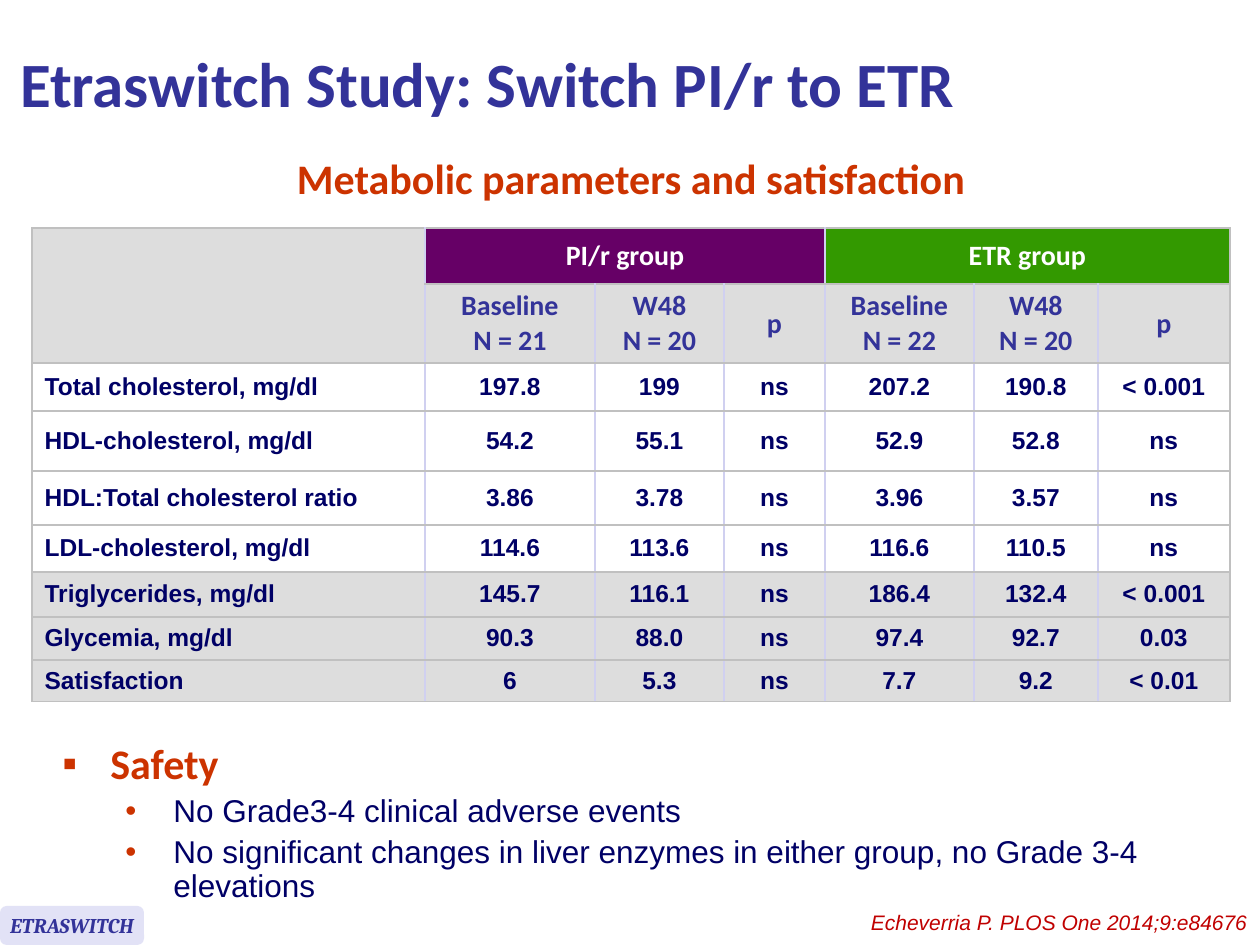
from dataclasses import dataclass

from lxml import etree
from pptx import Presentation
from pptx import util as u
from pptx.dml.color import RGBColor
from pptx.enum import shapes, text
from pptx.oxml import ns

PX = 914400 / 126
NAVY, INDIGO, RUST = "000066", "333399", "CC3300"
WHITE, GREY, EDGE, LAVENDER = "FFFFFF", "DDDDDD", "C0C0C0", "D0D0F0"
LEFT, CENTER, RIGHT = text.PP_ALIGN.LEFT, text.PP_ALIGN.CENTER, text.PP_ALIGN.RIGHT


@dataclass(frozen=True)
class Style:
    size: int
    face: str
    color: str
    bold: bool = False
    italic: bool = False
    align: text.PP_ALIGN = LEFT


@dataclass(frozen=True)
class Box:
    left: int
    top: int
    width: int
    height: int


@dataclass(frozen=True)
class Bullet:
    words: str
    mark: str
    level: int
    indent: int
    style: Style


TITLE = Style(36, "Calibri", INDIGO, bold=True)
SUBTITLE = Style(24, "Calibri", RUST, bold=True, align=CENTER)
GROUP = Style(16, "Calibri", WHITE, bold=True, align=CENTER)
COLUMN = Style(16, "Calibri", INDIGO, bold=True, align=CENTER)
LABEL = Style(14, "Arial", NAVY, bold=True)
VALUE = Style(14, "Arial", NAVY, bold=True, align=CENTER)
BADGE = Style(12, "Cambria", INDIGO, bold=True, italic=True, align=CENTER)
CITATION = Style(12, "Arial", "C00000", italic=True, align=RIGHT)
HEADING = Style(24, "Calibri", RUST, bold=True)
POINT = Style(18, "Arial", NAVY)

COLUMN_WIDTHS = [393, 170, 129, 101, 149, 124, 132]
ROW_HEIGHTS = [56, 79, 48, 60, 54, 47, 45, 43, 42]
GROUPS = [("PI/r group", "660066", 1), ("ETR group", "339900", 4)]
HEADERS = ["Baseline\nN = 21", "W48\nN = 20", "p", "Baseline\nN = 22", "W48\nN = 20", "p"]
RESULTS = [
    ("Total cholesterol, mg/dl", "197.8", "199", "ns", "207.2", "190.8", "< 0.001"),
    ("HDL-cholesterol, mg/dl", "54.2", "55.1", "ns", "52.9", "52.8", "ns"),
    ("HDL:Total cholesterol ratio", "3.86", "3.78", "ns", "3.96", "3.57", "ns"),
    ("LDL-cholesterol, mg/dl", "114.6", "113.6", "ns", "116.6", "110.5", "ns"),
    ("Triglycerides, mg/dl", "145.7", "116.1", "ns", "186.4", "132.4", "< 0.001"),
    ("Glycemia, mg/dl", "90.3", "88.0", "ns", "97.4", "92.7", "0.03"),
    ("Satisfaction", "6", "5.3", "ns", "7.7", "9.2", "< 0.01"),
]
FIRST_RESULT_ROW = 2
FIRST_GREY_RESULT = 4
SAFETY = [
    Bullet("Safety", "▪", 0, 48, HEADING),
    Bullet("No Grade3-4 clinical adverse events", "•", 1, 111, POINT),
    Bullet("No significant changes in liver enzymes in either group, no Grade 3-4 elevations",
           "•", 1, 111, POINT),
]


def px(length: int) -> u.Emu:
    return u.Emu(round(length * PX))


def place(box: Box) -> tuple:
    return px(box.left), px(box.top), px(box.width), px(box.height)


def rgb(color: str) -> RGBColor:
    return RGBColor.from_string(color)


def apply_style(paragraph, style: Style) -> None:
    paragraph.alignment = style.align
    font = paragraph.font
    font.size, font.name = u.Pt(style.size), style.face
    font.bold, font.italic = style.bold, style.italic
    font.color.rgb = rgb(style.color)


def write(frame, words: str, style: Style) -> None:
    frame.text = words
    for paragraph in frame.paragraphs:
        apply_style(paragraph, style)


def add_text(slide, box: Box, words: str, style: Style, anchor=text.MSO_ANCHOR.TOP):
    frame = slide.shapes.add_textbox(*place(box)).text_frame
    frame.word_wrap = True
    frame.vertical_anchor = anchor
    write(frame, words, style)
    return frame


def add_bullets(slide, box: Box, bullets: list[Bullet]) -> None:
    frame = slide.shapes.add_textbox(*place(box)).text_frame
    frame.word_wrap = True
    for index, bullet in enumerate(bullets):
        paragraph = frame.add_paragraph() if index else frame.paragraphs[0]
        paragraph.text = bullet.words
        paragraph.level = bullet.level
        paragraph.line_spacing = 0.9
        if index:
            paragraph.space_before = u.Pt(4)
        properties = paragraph._p.get_or_add_pPr()
        properties.set("marL", str(px(bullet.indent)))
        properties.set("indent", str(-px(48)))
        mark_color = etree.SubElement(properties, ns.qn("a:buClr"))
        etree.SubElement(mark_color, ns.qn("a:srgbClr"), val=RUST)
        etree.SubElement(properties, ns.qn("a:buFont"), typeface="Arial")
        etree.SubElement(properties, ns.qn("a:buChar"), char=bullet.mark)
        apply_style(paragraph, bullet.style)


def set_borders(cell, left: str, right: str) -> None:
    """Rule all four sides; top and bottom always share the edge colour."""
    properties = cell._tc.get_or_add_tcPr()
    sides = [("lnL", left), ("lnR", right), ("lnT", EDGE), ("lnB", EDGE)]
    for position, (side, color) in enumerate(sides):
        line = etree.Element(ns.qn(f"a:{side}"), w=str(u.Pt(1)))
        fill = etree.SubElement(line, ns.qn("a:solidFill"))
        etree.SubElement(fill, ns.qn("a:srgbClr"), val=color)
        properties.insert(position, line)


def fill_cell(cell, words: str, style: Style, fill: str) -> None:
    cell.fill.solid()
    cell.fill.fore_color.rgb = rgb(fill)
    cell.vertical_anchor = text.MSO_ANCHOR.MIDDLE
    cell.margin_top = cell.margin_bottom = px(5)
    write(cell.text_frame, words, style)


def add_results_table(slide, left: int, top: int) -> None:
    box = Box(left, top, sum(COLUMN_WIDTHS), sum(ROW_HEIGHTS))
    table = slide.shapes.add_table(len(ROW_HEIGHTS), len(COLUMN_WIDTHS), *place(box)).table
    table.first_row = table.horz_banding = False
    for column, width in zip(table.columns, COLUMN_WIDTHS):
        column.width = px(width)
    for row, height in zip(table.rows, ROW_HEIGHTS):
        row.height = px(height)

    table.cell(0, 0).merge(table.cell(1, 0))
    fill_cell(table.cell(0, 0), "", COLUMN, GREY)
    for name, color, first in GROUPS:
        table.cell(0, first).merge(table.cell(0, first + 2))
        fill_cell(table.cell(0, first), name, GROUP, color)
    for col, header in enumerate(HEADERS, start=1):
        fill_cell(table.cell(1, col), header, COLUMN, GREY)
    for index, result in enumerate(RESULTS):
        fill = GREY if index >= FIRST_GREY_RESULT else WHITE
        for col, words in enumerate(result):
            cell = table.cell(index + FIRST_RESULT_ROW, col)
            fill_cell(cell, words, VALUE if col else LABEL, fill)

    last = len(COLUMN_WIDTHS) - 1
    for row in range(len(ROW_HEIGHTS)):
        for col in range(last + 1):
            cell = table.cell(row, col)
            end = col + cell.span_width - 1 if cell.is_merge_origin else col
            set_borders(cell, LAVENDER if col else EDGE, EDGE if end == last else LAVENDER)


def add_badge(slide, box: Box, words: str) -> None:
    badge = slide.shapes.add_shape(shapes.MSO_SHAPE.ROUNDED_RECTANGLE, *place(box))
    badge.shadow.inherit = False
    badge.fill.solid()
    badge.fill.fore_color.rgb = rgb("E2E2F6")
    badge.line.fill.background()
    badge.text_frame.word_wrap = False
    badge.text_frame.vertical_anchor = text.MSO_ANCHOR.MIDDLE
    write(badge.text_frame, words, BADGE)


def main() -> None:
    deck = Presentation()
    deck.slide_width, deck.slide_height = px(1260), px(945)
    slide = deck.slides.add_slide(deck.slide_layouts[6])
    subtitle = add_text(slide, Box(224, 170, 814, 43),
                        "Metabolic parameters and satisfaction", SUBTITLE)
    subtitle.paragraphs[0].line_spacing = u.Pt(15.2)
    add_results_table(slide, 32, 228)
    add_bullets(slide, Box(50, 737, 1182, 82), SAFETY)
    add_badge(slide, Box(0, 906, 144, 39), "ETRASWITCH")
    add_text(slide, Box(514, 903, 746, 38), "Echeverria P. PLOS One 2014;9:e84676", CITATION)
    add_text(slide, Box(8, 6, 1129, 152), "Etraswitch Study: Switch PI/r to ETR", TITLE,
             text.MSO_ANCHOR.MIDDLE)
    deck.save("out.pptx")


if __name__ == "__main__":
    main()
